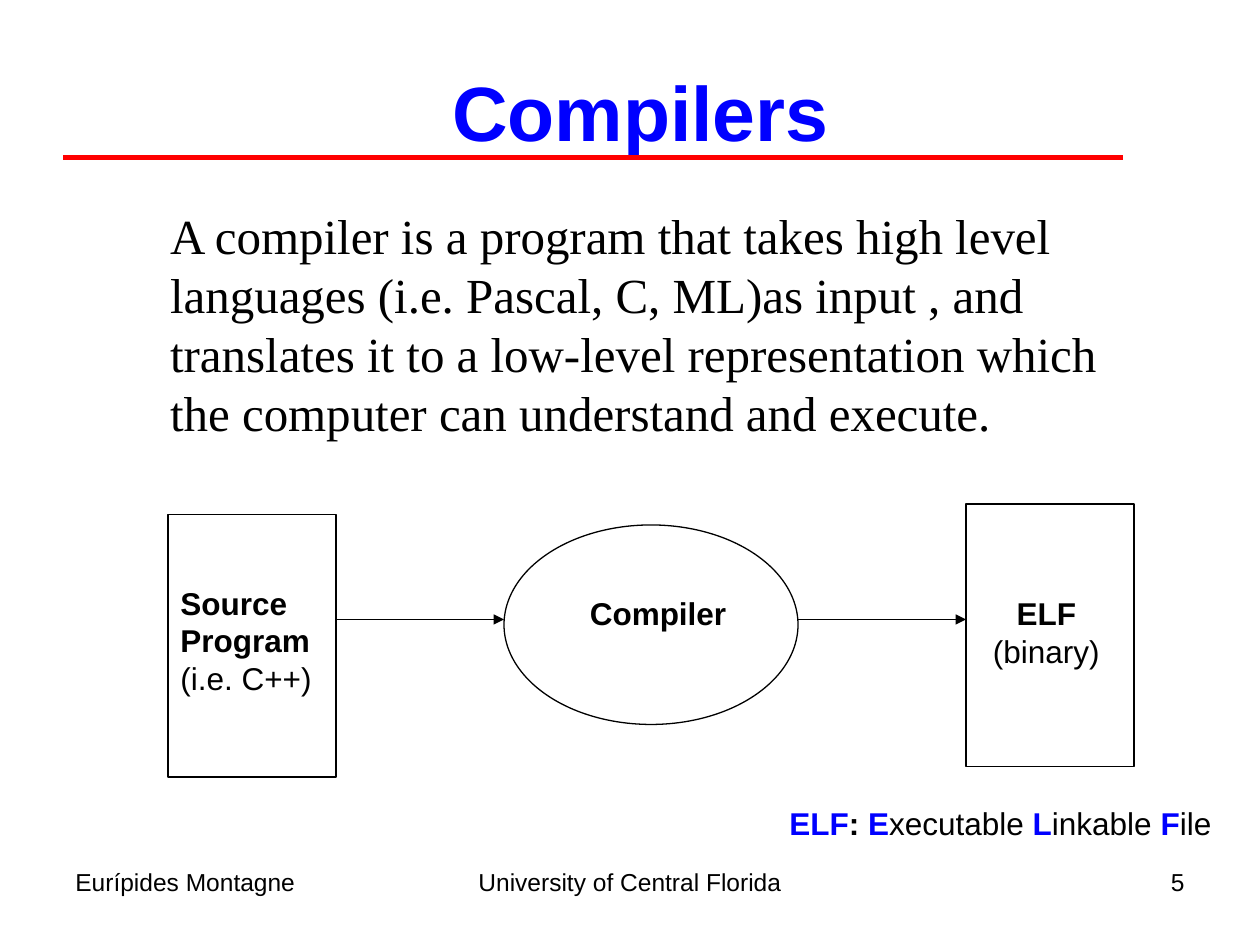
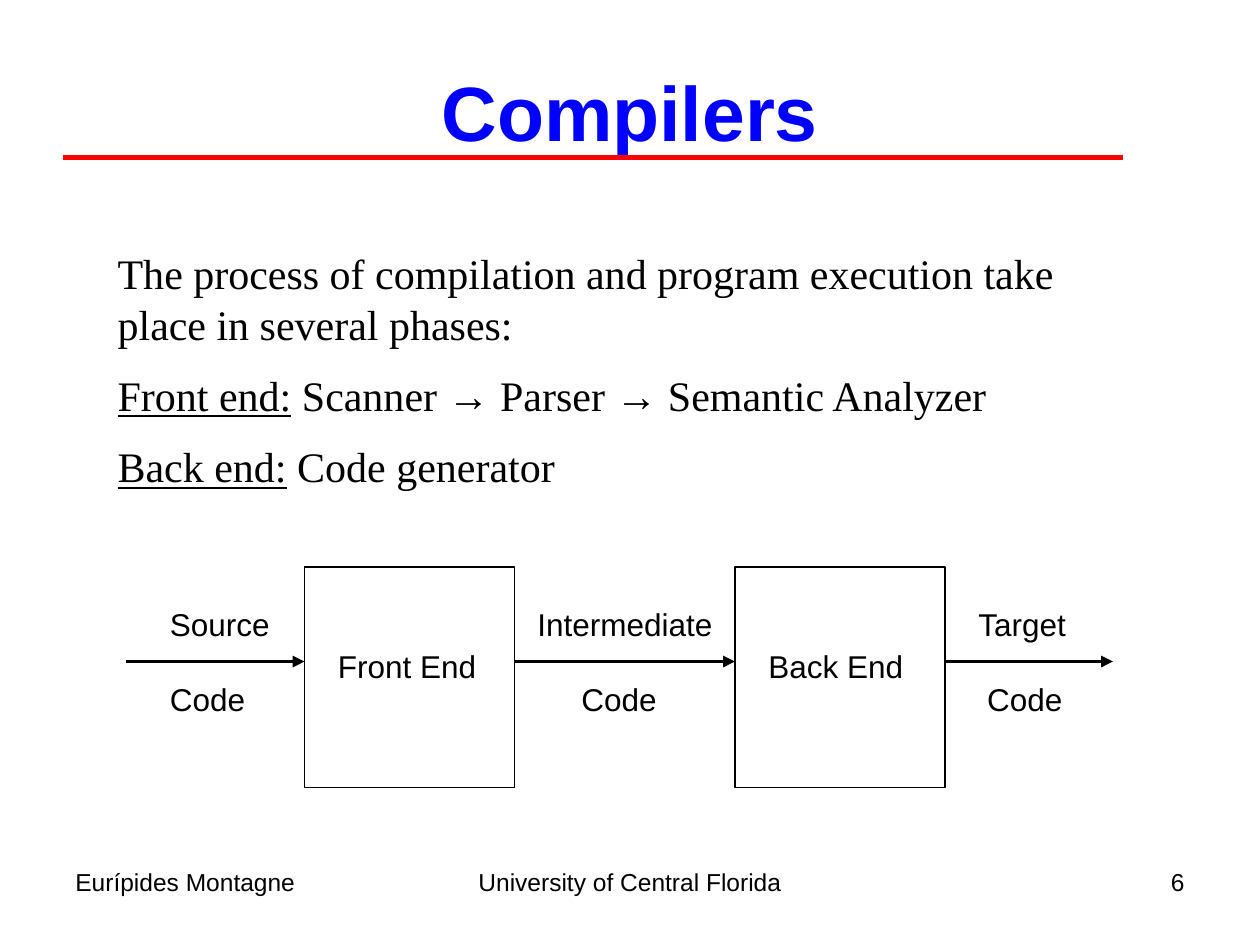
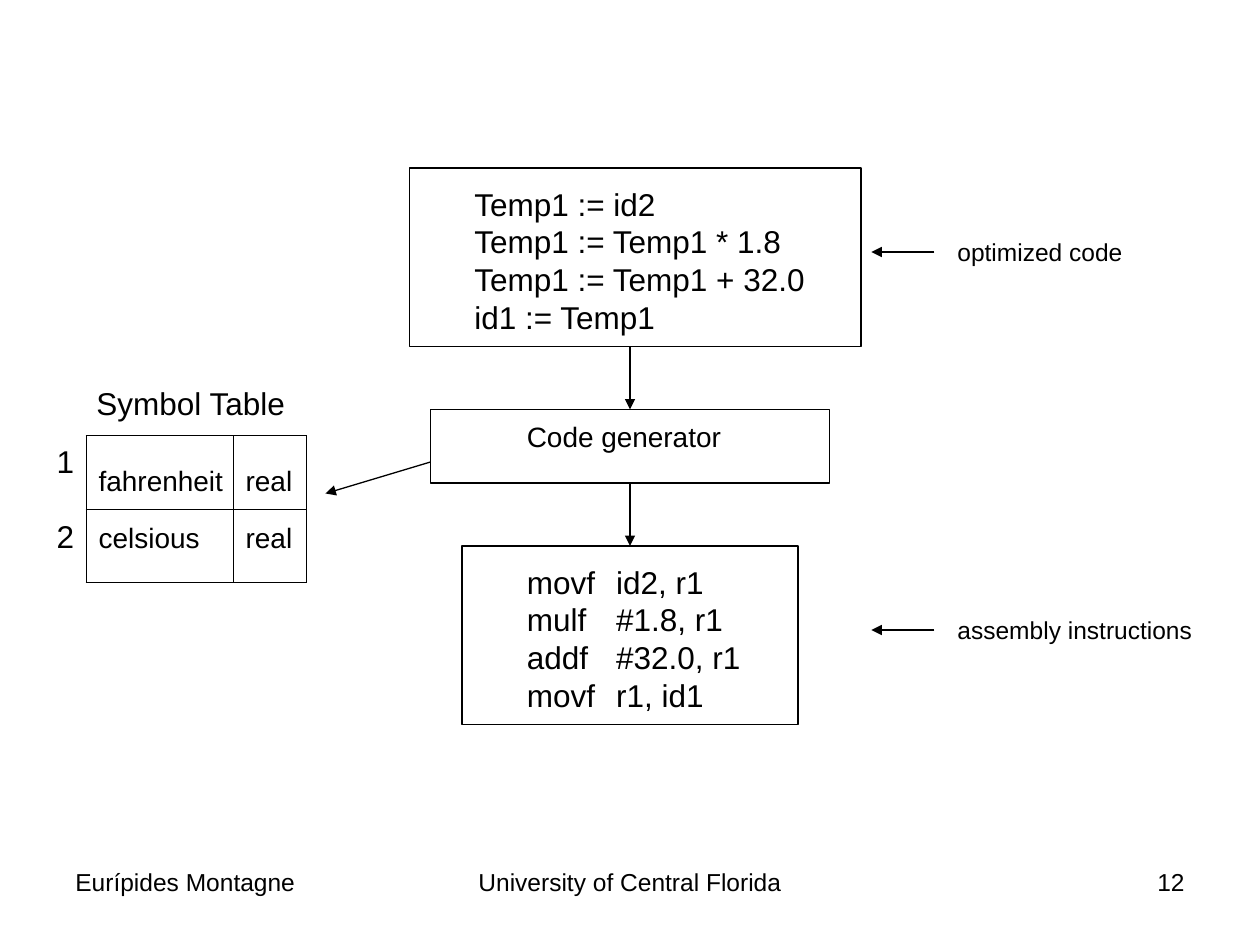
from dataclasses import dataclass

from lxml.etree import SubElement
from pptx import Presentation
from pptx.dml.color import RGBColor
from pptx.enum.shapes import MSO_CONNECTOR, MSO_SHAPE
from pptx.enum.text import MSO_ANCHOR, MSO_AUTO_SIZE, PP_ALIGN
from pptx.oxml.ns import qn
from pptx.util import Inches, Pt


@dataclass(frozen=True)
class Theme:
    ink: RGBColor = RGBColor(0x00, 0x00, 0x00)
    accent: RGBColor = RGBColor(0x00, 0x00, 0xFF)
    rule: RGBColor = RGBColor(0xFF, 0x00, 0x00)
    sans: str = "Arial"
    serif: str = "Times New Roman"
    title_size: int = Pt(44)
    label_size: int = Pt(18)
    cell_size: int = Pt(16)
    small_size: int = Pt(14)
    thin: int = Pt(0.75)
    medium: int = Pt(2.25)
    thick: int = Pt(3)


THEME = Theme()
COLUMNS, ROWS = 120, 90
SLIDE_WIDTH, SLIDE_HEIGHT = Inches(10), Inches(7.5)
CELL = SLIDE_WIDTH // COLUMNS  # the grid is square: SLIDE_HEIGHT // ROWS is the same

LABEL = {"name": THEME.sans, "size": THEME.label_size, "bold": False}
SMALL = {**LABEL, "size": THEME.small_size}
CELL_TEXT = {**LABEL, "size": THEME.cell_size}
TITLE = {**LABEL, "size": THEME.title_size, "bold": True, "color": THEME.accent}
BODY = {"name": THEME.serif}
BOLD = {"bold": True}
INITIAL = {"bold": True, "color": THEME.accent}
UNDERLINE = {"underline": True}
LINE_GAP = Pt(21.6)


def place(*cells):
    return [round(cell * CELL) for cell in cells]


def write(frame, paragraphs, style, align=PP_ALIGN.LEFT, gap=Pt(0), indents=(0,)):
    """Fill a frame; a paragraph is a string or a list of (text, format) runs."""
    frame.word_wrap = True
    frame.auto_size = MSO_AUTO_SIZE.NONE
    for index, runs in enumerate(paragraphs):
        paragraph = frame.add_paragraph() if index else frame.paragraphs[0]
        paragraph.alignment = align
        paragraph.space_before = gap if index else Pt(0)
        properties = paragraph._p.get_or_add_pPr()
        properties.set("marL", str(Inches(indents[index % len(indents)])))
        properties.set("indent", "0")
        SubElement(properties, qn("a:buNone"))
        for text, changes in [(runs, {})] if isinstance(runs, str) else runs:
            run = paragraph.add_run()
            run.text = text
            values = {"color": THEME.ink, **style, **changes}
            run.font.color.rgb = values.pop("color")
            for name, value in values.items():
                setattr(run.font, name, value)


# Boxes are (left, top, width, height) and lines (x1, y1, x2, y2) in grid cells.
# A line may name the (shape index, side) that it begins and ends on.
PAGES = [
    {
        "number": "5",
        "title": "Compilers",
        "title_inset": 0.27,
        "body_box": (9, 19, 103, 31),
        "body_size": Pt(28),
        "body": [
            "A compiler is a program that takes high level languages (i.e. Pascal, C, ML)as input , "
            "and translates it to a low-level representation which the computer can understand and execute."
        ],
        "shapes": [
            (MSO_SHAPE.RECTANGLE, (16, 49, 16, 25)),
            (MSO_SHAPE.RECTANGLE, (92, 48, 16, 25)),
            (MSO_SHAPE.OVAL, (48, 50, 28, 19)),
        ],
        "line_width": THEME.thin,
        "lines": [((32, 59, 48, 59), None, None), ((76, 59, 92, 59), None, None)],
        "labels": [
            ((55, 56, 17, 5), [[("Compiler", BOLD)]], LABEL, {}),
            ((16, 55, 16, 12), [[("Source", BOLD)], [("Program", BOLD)], "(i.e. C++)"], LABEL, {}),
            ((93, 56, 13.3, 8.4), [[("ELF", BOLD)], "(binary)"], LABEL, {"align": PP_ALIGN.CENTER}),
            (
                (74, 76, 43, 5),
                [[("ELF", INITIAL), (": ", BOLD), ("E", INITIAL), ("xecutable ", {}),
                  ("L", INITIAL), ("inkable ", {}), ("F", INITIAL), ("ile", {})]],
                LABEL, {},
            ),
        ],
    },
    {
        "number": "6",
        "title": "Compilers",
        "title_inset": 0.1,
        "body_box": (4, 23, 103, 25),
        "body_size": Pt(24),
        "body": [
            "The process of compilation and program execution take place in several phases:",
            [("Front end:", UNDERLINE), (" Scanner → Parser → Semantic Analyzer", {})],
            [("Back end:", UNDERLINE), (" Code generator", {})],
        ],
        "shapes": [(MSO_SHAPE.RECTANGLE, (left, 54, 20, 21)) for left in (29, 70)],
        "line_width": THEME.medium,
        "lines": [((x1, 63, x2, 63), None, None) for x1, x2 in ((12, 29), (49, 70), (90, 106))],
        "labels": [
            ((31, 61, 16, 5), ["Front End"], LABEL, {}),
            ((72, 61, 16, 5), ["Back End"], LABEL, {}),
            *[
                ((left, 57, width, 12), [word, "Code"], LABEL, {"gap": LINE_GAP, "indents": (0, indent)})
                for left, width, word, indent in (
                    (15, 13, "Source", 0), (50, 20, "Intermediate", 0.35), (92, 12, "Target", 0.07),
                )
            ],
        ],
    },
    {
        "number": "12",
        "shapes": [
            (MSO_SHAPE.RECTANGLE, (41, 39, 38, 7)),
            (MSO_SHAPE.RECTANGLE, (39, 16, 43, 17)),
            (MSO_SHAPE.RECTANGLE, (44, 52, 32, 17)),
        ],
        "line_width": THEME.thin,
        "lines": [
            ((60, 46, 60, 52), (0, 2), (2, 0)),
            ((60, 33, 60, 39), None, (0, 0)),
            ((41, 44, 31, 47), None, None),
            ((89, 24, 83, 24), None, None),
            ((89, 60, 83, 60), None, None),
        ],
        "labels": [
            ((8, 36, 22, 5), ["Symbol Table"], LABEL, {}),
            ((4.2, 41.5, 4, 12), ["1", "2"], LABEL, {"gap": LINE_GAP}),
            ((49, 39.4, 23, 5), ["Code generator"], CELL_TEXT, {}),
            (
                (44, 17, 36, 15.6),
                ["Temp1 := id2", "Temp1 := Temp1 * 1.8", "Temp1 := Temp1 + 32.0", "id1 := Temp1"],
                LABEL, {},
            ),
            ((49, 53, 9, 15.6), ["movf", "mulf", "addf", "movf"], LABEL, {}),
            ((57.5, 53, 16, 15.6), ["id2, r1", "#1.8, r1", "#32.0, r1", "r1, id1"], LABEL, {}),
            ((90, 22, 20, 4), ["optimized code"], SMALL, {}),
            ((90, 58, 26, 4), ["assembly instructions"], SMALL, {}),
        ],
        "symbols": [("fahrenheit", "real"), ("celsious", "real")],
    },
]

presentation = Presentation()
presentation.slide_width, presentation.slide_height = SLIDE_WIDTH, SLIDE_HEIGHT
content_layout, blank_layout = presentation.slide_layouts[1], presentation.slide_layouts[6]

for page in PAGES:
    slide = presentation.slides.add_slide(content_layout if "title" in page else blank_layout)
    lines = [(*line, THEME.ink, page["line_width"], True) for line in page["lines"]]

    if "title" in page:
        title, body = slide.placeholders
        title.left, title.top, title.width, title.height = place(6, 3, 108, 15)
        body.left, body.top, body.width, body.height = place(*page["body_box"])
        title.text_frame.vertical_anchor = MSO_ANCHOR.MIDDLE
        title.text_frame.margin_left = Inches(page["title_inset"])
        write(title.text_frame, [page["title"]], TITLE, PP_ALIGN.CENTER)
        write(body.text_frame, page["body"], {**BODY, "size": page["body_size"]}, gap=Pt(12), indents=(0.5,))
        lines.append(((6, 15, 107, 15), None, None, THEME.rule, THEME.thick, False))

    shapes = []
    for kind, box in page["shapes"]:
        shape = slide.shapes.add_shape(kind, *place(*box))
        shape.shadow.inherit = False
        shape.fill.background()
        shape.line.color.rgb = THEME.ink
        shape.line.width = THEME.thin
        shapes.append(shape)

    for ends, start, finish, color, width, arrow in lines:
        connector = slide.shapes.add_connector(MSO_CONNECTOR.STRAIGHT, *place(*ends))
        if start:
            connector.begin_connect(shapes[start[0]], start[1])
        if finish:
            connector.end_connect(shapes[finish[0]], finish[1])
        connector.line.color.rgb = color
        connector.line.width = width
        properties = connector.element.spPr
        if arrow:
            SubElement(properties.find(qn("a:ln")), qn("a:tailEnd"), type="triangle")
        SubElement(properties, qn("a:effectLst"))

    footers = [
        ((6, 82, 28, 6.2), ["Eurípides Montagne"], SMALL, {}),
        ((41, 82, 38, 6.2), ["University of Central Florida"], SMALL, {"align": PP_ALIGN.CENTER}),
        ((86, 82, 28, 6.2), [page["number"]], SMALL, {"align": PP_ALIGN.RIGHT}),
    ]
    for box, paragraphs, style, options in page["labels"] + footers:
        write(slide.shapes.add_textbox(*place(*box)).text_frame, paragraphs, style, **options)

    if "symbols" in page:
        table = slide.shapes.add_table(2, 2, *place(8.2, 41.5, 21, 14)).table
        table.first_row = table.horz_banding = False
        for column, width in zip(table.columns, place(14, 7)):
            column.width = width
        for row, names, anchor in zip(table.rows, page["symbols"], (MSO_ANCHOR.BOTTOM, MSO_ANCHOR.TOP)):
            for cell, name in zip(row.cells, names):
                write(cell.text_frame, [name], CELL_TEXT)
                cell.vertical_anchor = anchor
                cell.margin_left, cell.margin_right = Inches(0.1), 0
                cell.margin_top, cell.margin_bottom = Inches(0.11), Inches(0.09)
                properties = cell._tc.get_or_add_tcPr()
                for side in ("a:lnL", "a:lnR", "a:lnT", "a:lnB"):
                    border = SubElement(properties, qn(side), w=str(THEME.thin))
                    SubElement(SubElement(border, qn("a:solidFill")), qn("a:srgbClr"), val=str(THEME.ink))
                cell.fill.background()

presentation.save("out.pptx")
